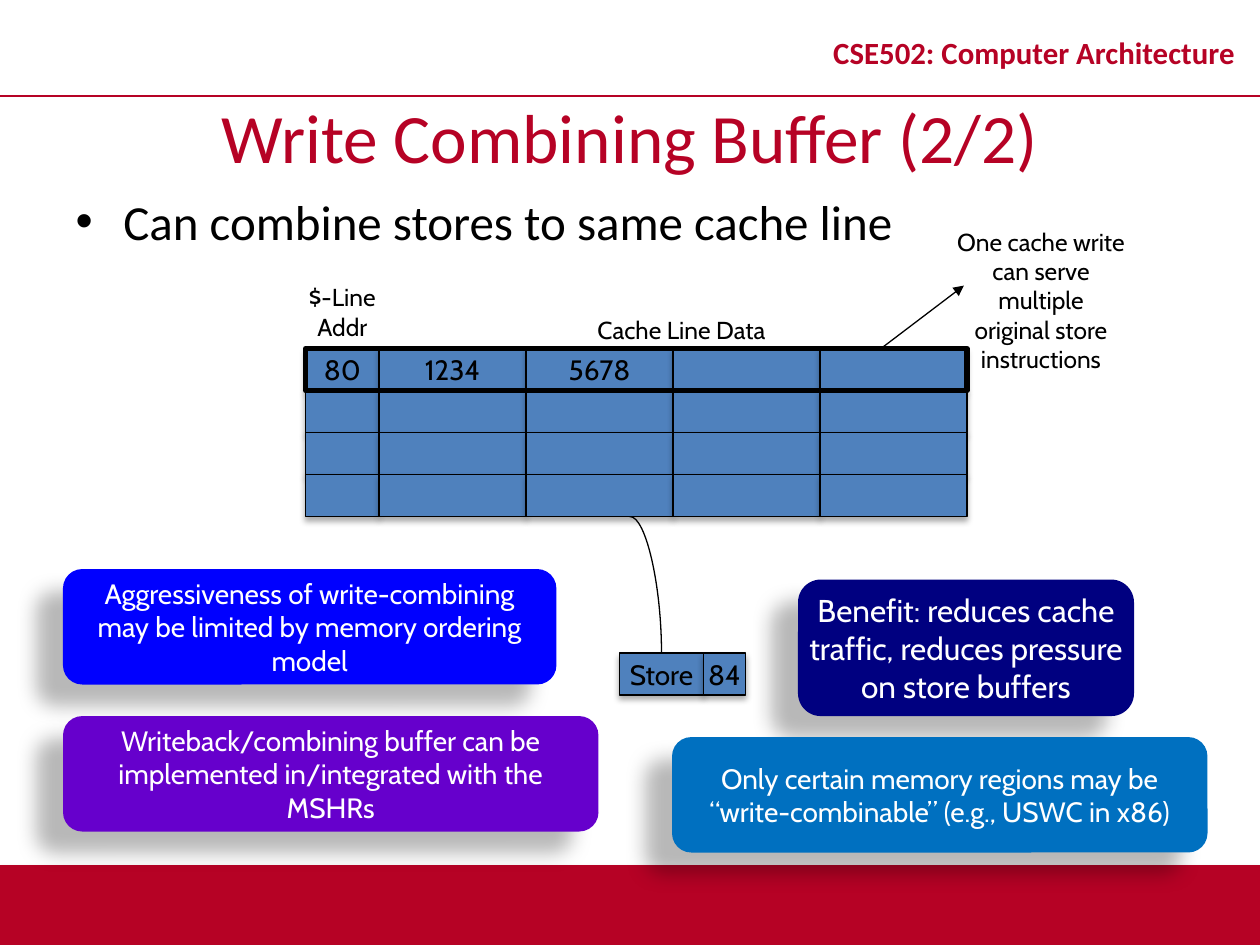
from lxml.etree import SubElement
from pptx import Presentation
from pptx.dml.color import RGBColor
from pptx.enum.shapes import MSO_CONNECTOR as Link, MSO_SHAPE as Kind
from pptx.enum.text import MSO_ANCHOR as Anchor, MSO_AUTO_SIZE as Fit, PP_ALIGN as Align
from pptx.oxml.ns import qn
from pptx.util import Emu, Inches, Pt

UNIT = Inches(1) / 12  # the slide is 120 columns by 90 rows
RED, BLACK, WHITE, BLUE = "B60225", "000000", "FFFFFF", "4F81BD"
hue = RGBColor.from_string


def grid(*cells):
    return [Emu(round(n * UNIT)) for n in cells]


def write(shape, text, size, color, face="Cabin", bold=False,
          anchor=Anchor.MIDDLE, wrap=True, align=Align.CENTER):
    frame = shape.text_frame
    frame.text = text
    form = {"auto_size": Fit.NONE, "word_wrap": wrap, "vertical_anchor": anchor}
    for name, value in form.items():
        setattr(frame, name, value)
    for para in frame.paragraphs:
        para.alignment = align
        for name, value in {"name": face, "size": Pt(size), "bold": bold}.items():
            setattr(para.font, name, value)
        para.font.color.rgb = hue(color)


deck = Presentation()
deck.slide_width, deck.slide_height = grid(120, 90)
slide = deck.slides.add_slide(deck.slide_layouts[1])
shapes = slide.shapes

# Title and bullet
title, body = slide.placeholders
for holder, at in ((title, (0, 9.12, 120, 7.56)), (body, (6, 17.6, 108, 64.2))):
    holder.left, holder.top, holder.width, holder.height = grid(*at)
write(title, "Write Combining Buffer (2/2)", 39.6, RED, "Calibri")
write(body, "Can combine stores to same cache line", 28, BLACK, "Calibri",
      anchor=Anchor.TOP, align=Align.LEFT)
item = body.text_frame.paragraphs[0]
props = item._p.get_or_add_pPr()
props.set("marL", str(Inches(0.38)))
props.set("indent", str(-Inches(0.38)))

# Header, column labels and note
header = shapes.add_textbox(*grid(77, 1.56, 43, 7.56))
write(header, "CSE502: Computer Architecture", 17.6, RED, "Calibri", True)
header.text_frame.paragraphs[0].line_spacing = 0.8
labels = [
    ((28.1, 26.3, 9, 6.9), "$-Line\nAddr", True),
    ((55.7, 29.4, 18.4, 4), "Cache Line Data", False),
    ((89.3, 21, 19.7, 12.5), "One cache write\ncan serve multiple\n"
     "original store\ninstructions", True),
]
for at, text, wrap in labels:
    write(shapes.add_textbox(*grid(*at)), text, 14, BLACK,
          anchor=Anchor.TOP, wrap=wrap)

# Header rule, store curve and note arrow
lines = [
    (Link.STRAIGHT, (0, 9.12, 120, 9.12), RED, 1, 0, False),
    (Link.CURVE, (47, 52.2, 73, 46.2), BLACK, 0.75, 270, True),
    (Link.STRAIGHT, (83.9, 33.2, 91.8, 27.2), BLACK, 0.75, 0, True),
]
for kind, ends, color, width, turn, arrow in lines:
    line = shapes.add_connector(kind, *grid(*ends))
    line.line.color.rgb = hue(color)
    line.line.width = Pt(width)
    spot = line._element.spPr
    if turn:
        spot.find(qn("a:xfrm")).set("rot", str(turn * 60000))
    if arrow:
        SubElement(line.line._get_or_add_ln(), qn("a:tailEnd"), type="triangle")
    SubElement(spot, qn("a:effectLst"))

# Shadows: opacity, blur, distance, angle
SOFT, DEEP, BASE = (32, 3.5, 2.2, 90), (28, 11.8, 19.7, 141), (35, 3.1, 1.8, 90)

# Boxes: kind, place, fill, line width, shadow, text, size, colour, wrap
boxes = [(Kind.RECTANGLE, (0, 82.4, 120, 7.6), RED, 0, BASE, "", 16, WHITE, True)]

# Buffer cells: an address column and four data columns, then the store
cols = [(29.1, 7)] + [(36.1 + 14 * n, 14) for n in range(4)]
words = ["80", "1234", "5678"]
cells = [((x, 33.2 + 4 * row, wide, 4), words[n] if row == 0 and n < 3 else "")
         for row in range(4) for n, (x, wide) in enumerate(cols)]
cells += [((59, 62.2, 8, 4), "Store"), ((67, 62.2, 4, 4), "84")]
boxes += [(Kind.RECTANGLE, at, BLUE, 0.75, SOFT, text, 16, BLACK, False)
          for at, text in cells]

# Outline of the combined entry
boxes.append((Kind.RECTANGLE, (29.1, 33.2, 63, 4), None, 3, None, "", 16, BLACK, True))

# Callouts
notes = [
    ((76, 55.2, 32, 13), "000080", 18, False,
     "Benefit: reduces cache\ntraffic, reduces pressure\non store buffers"),
    ((6, 54.2, 47, 11), "0000FF", 16, True,
     "Aggressiveness of write-combining may be limited by memory ordering model"),
    ((6, 68.2, 51, 11), "6600CC", 16, True,
     "Writeback/combining buffer can be implemented in/integrated with the MSHRs"),
    ((64, 70.2, 51, 11), "0070C0", 16, True,
     "Only certain memory regions may be “write-combinable” (e.g., USWC in x86)"),
]
boxes += [(Kind.ROUNDED_RECTANGLE, at, fill, 0, DEEP, text, size, WHITE, wrap)
          for at, fill, size, wrap, text in notes]

for kind, at, fill, width, shade, text, size, color, wrap in boxes:
    box = shapes.add_shape(kind, *grid(*at))
    box.shadow.inherit = False
    if fill:
        box.fill.solid()
        box.fill.fore_color.rgb = hue(fill)
    else:
        box.fill.background()
    if width:
        box.line.color.rgb = hue(BLACK)
        box.line.width = Pt(width)
    else:
        box.line.fill.background()
    if shade:
        clear, blur, gap, angle = shade
        cast = SubElement(box._element.spPr.find(qn("a:effectLst")), qn("a:outerShdw"),
                          blurRad=str(Pt(blur)), dist=str(Pt(gap)),
                          dir=str(angle * 60000), rotWithShape="0")
        tone = SubElement(cast, qn("a:srgbClr"), val=BLACK)
        SubElement(tone, qn("a:alpha"), val=str(clear * 1000))
    if text:
        write(box, text, size, color, wrap=wrap)

deck.save("out.pptx")
